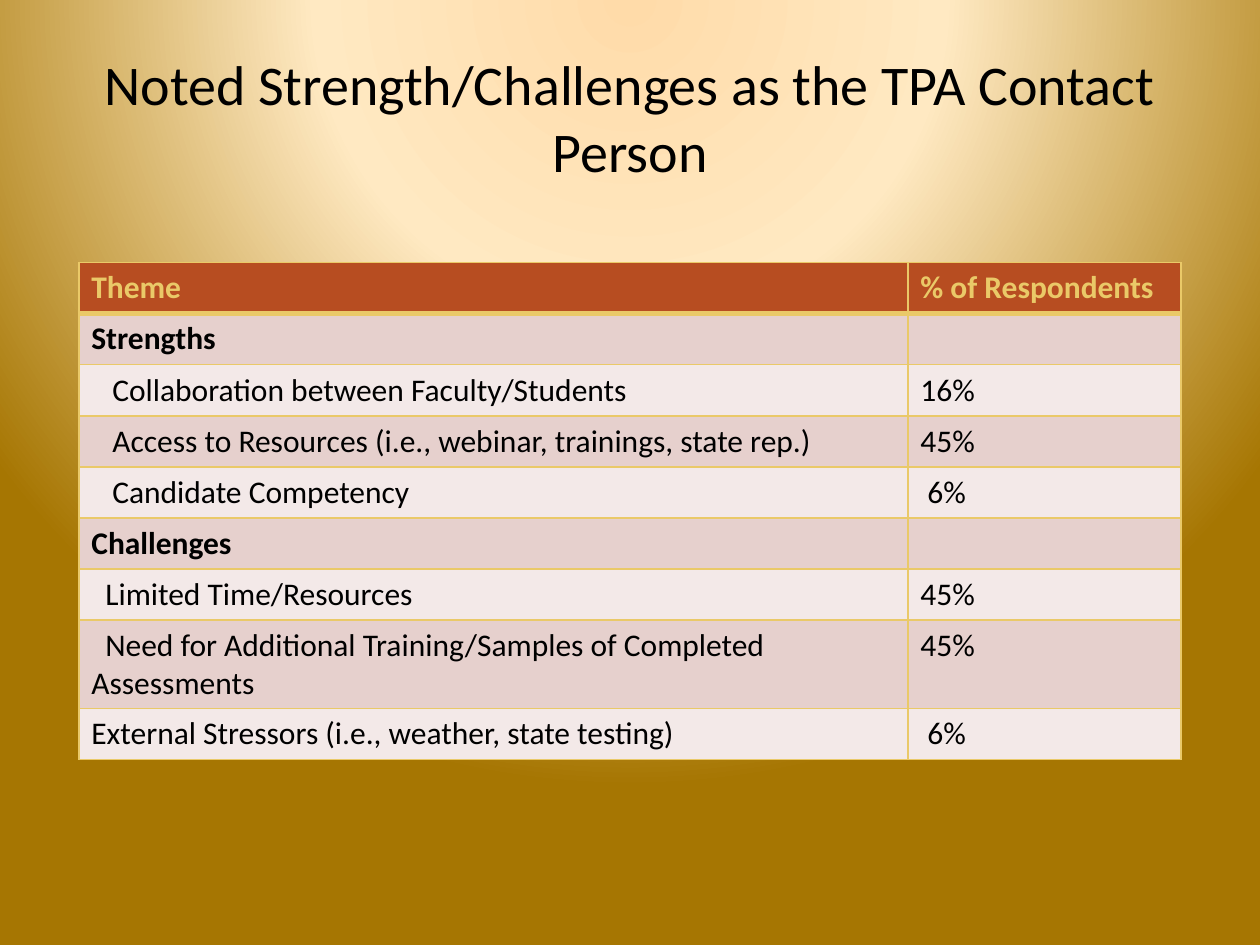
from lxml import etree
from pptx import Presentation
from pptx.dml.color import RGBColor
from pptx.enum.text import MSO_ANCHOR, PP_ALIGN
from pptx.oxml import parse_xml
from pptx.oxml.ns import nsdecls, qn
from pptx.util import Pt

CENTER, LEFT = PP_ALIGN.CENTER, PP_ALIGN.LEFT
MIDDLE = MSO_ANCHOR.MIDDLE
BLACK, GOLD, RUST = "000000", "EAC968", "B74D21"
BANDS = ["E6D0CD", "F3E9E8"]


def write(tf, text, size=18, color=BLACK, bold=False, align=LEFT, indent=0):
    """Fill the first paragraph; indent moves its first line only, in points."""
    p = tf.paragraphs[0]
    p.alignment = align
    if indent:
        pPr = p._p.get_or_add_pPr()
        pPr.set("marL", "0")
        pPr.set("indent", str(Pt(indent)))
    r = p.add_run()
    r.text = text
    r.font.name, r.font.size, r.font.bold = "Calibri", Pt(size), bold
    r.font.color.rgb = RGBColor.from_string(color)


def add_border(cell, side, width):
    ln = etree.SubElement(cell._tc.get_or_add_tcPr(), qn(f"a:ln{side}"), w=str(Pt(width)))
    fill = etree.SubElement(ln, qn("a:solidFill"))
    etree.SubElement(fill, qn("a:srgbClr"), val=GOLD)


prs = Presentation()
prs.slide_width, prs.slide_height = Pt(720), Pt(540)
s = prs.slides.add_slide(prs.slide_layouts[6])

# Background: circular gradient centred above the slide
stops = "".join(
    f'<a:gs pos="{pos * 1000}"><a:srgbClr val="{color}"/></a:gs>'
    for pos, color in [(0, "FFDBA9"), (40, "FFE9C2"), (100, "A67602")]
)
s.background.fill.solid()
bgPr = s.background._cSld.bg.bgPr
bgPr.replace(bgPr[0], parse_xml(
    f'<a:gradFill {nsdecls("a")} rotWithShape="1"><a:gsLst>{stops}</a:gsLst>'
    '<a:path path="circle"><a:fillToRect l="50000" t="-80000" r="50000" b="180000"/>'
    '</a:path></a:gradFill>'
))

# Title
tf = s.shapes.add_textbox(Pt(45), Pt(21.6), Pt(630), Pt(90)).text_frame
tf.word_wrap = True
tf.vertical_anchor = MIDDLE
write(tf, "Noted Strength/Challenges as the TPA Contact Person", size=32, align=CENTER)

# Table: theme, share, first-line indent of the theme
rows = [
    ("Theme", "% of Respondents", 0),
    ("Strengths", "", 0),
    ("Collaboration between Faculty/Students", "16%", 12),
    ("Access to Resources (i.e., webinar, trainings, state rep.)", "45%", 12),
    ("Candidate Competency", "6%", 12),
    ("Challenges", "", 0),
    ("Limited Time/Resources", "45%", 8),
    ("Need for Additional Training/Samples of Completed Assessments", "45%", 8),
    ("External Stressors (i.e., weather, state testing)", "6%", 0),
]
ROW_H = 29.2
table = s.shapes.add_table(
    len(rows), 2, Pt(45), Pt(150), Pt(630), Pt(ROW_H * len(rows))
).table
table.columns[0].width, table.columns[1].width = Pt(473.75), Pt(156.25)

for i, (theme, share, theme_indent) in enumerate(rows):
    header = i == 0
    table.rows[i].height = Pt(ROW_H)
    share_indent = 4 if share == "6%" else 0
    for j, (text, indent) in enumerate([(theme, theme_indent), (share, share_indent)]):
        cell = table.cell(i, j)
        for side in "LRTB":
            thick = (header and side == "B") or (i == 1 and side == "T")
            add_border(cell, side, 3 if thick else 1)
        cell.fill.solid()
        cell.fill.fore_color.rgb = RGBColor.from_string(RUST if header else BANDS[(i - 1) % 2])
        if text:
            write(cell.text_frame, text, color=GOLD if header else BLACK,
                  bold=header or not share, indent=indent)
        else:
            cell.text_frame.paragraphs[0].font.size = Pt(18)

prs.save("out.pptx")
